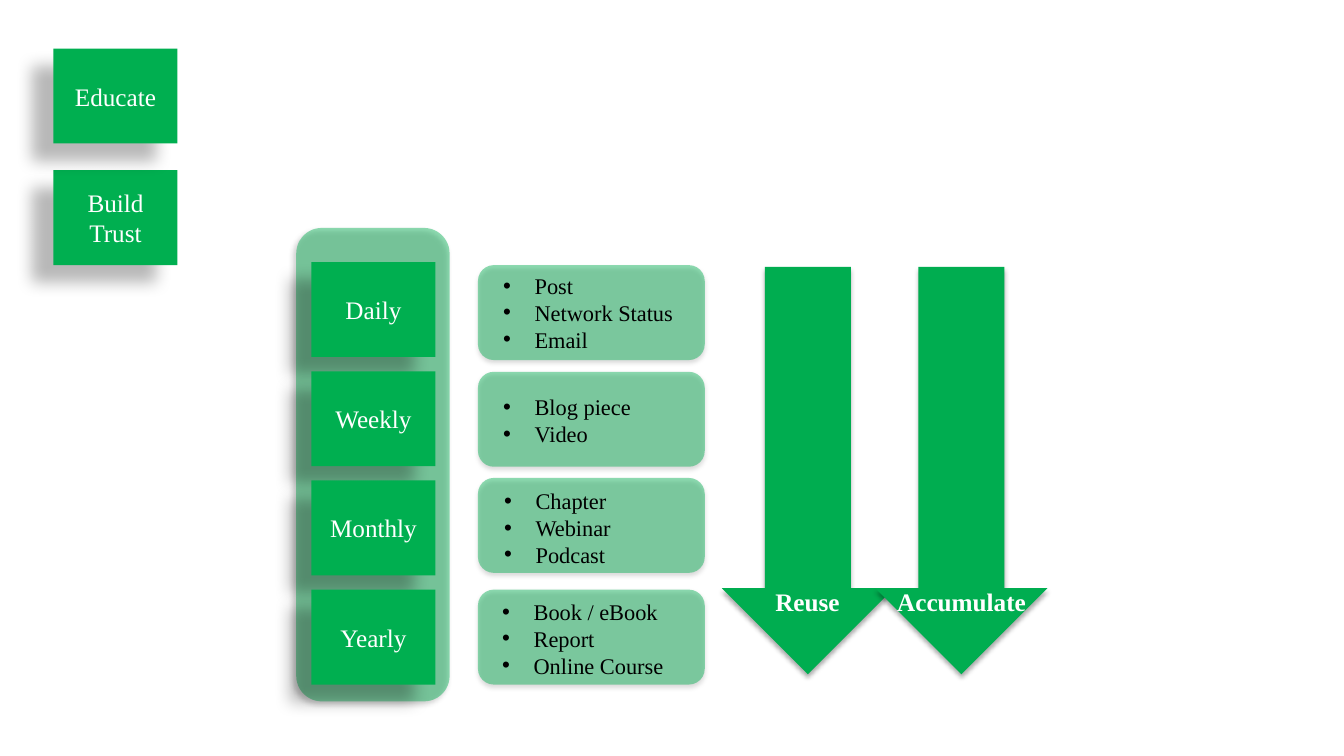
from dataclasses import dataclass

from lxml.etree import SubElement
from pptx import Presentation
from pptx.dml.color import RGBColor
from pptx.enum.shapes import MSO_SHAPE as Preset
from pptx.enum.text import MSO_ANCHOR as Anchor, MSO_AUTO_SIZE as AutoSize, PP_ALIGN as Align
from pptx.oxml.ns import qn
from pptx.shapes.autoshape import Shape
from pptx.slide import Slide
from pptx.util import Pt

FONT = "Times New Roman"
GREEN, ARROW_GREEN = "00AF50", "00AD50"
WHITE, BLACK = "FFFFFF", "000000"
OPAQUE, TINT = 100, 44
BOX_WIDTH, BOX_HEIGHT = 88.6, 67.8
GOAL_LEFT = 38.2
PERIOD_LEFT, PERIOD_TOP, PERIOD_PITCH = 222.5, 187.2, 78
PANEL_LEFT, PANEL_WIDTH = 341.4, 162
ARROW_TOP, ARROW_WIDTH, ARROW_HEIGHT = 190.7, 123, 291
ARROW_LABEL_TOP, ARROW_LABEL_HEIGHT = 415.4, 29
BULLET_INDENT = 22.5


@dataclass(frozen=True)
class Area:
    left: float
    top: float
    width: float
    height: float

    def lengths(self) -> list[Pt]:
        return [Pt(n) for n in (self.left, self.top, self.width, self.height)]


@dataclass(frozen=True)
class Shadow:
    opacity: float
    blur: float
    distance: float
    angle: float


@dataclass(frozen=True)
class Period:
    name: str
    panel_top: float
    outputs: list[str]
    outputs_area: Area


@dataclass(frozen=True)
class Flow:
    name: str
    left: float
    label_left: float
    label_width: float


COLUMN_SHADOW = Shadow(40, 4, 3, 135)
BOX_SHADOW = Shadow(28, 11.8, 19.7, 141)
SOFT_SHADOW = Shadow(32, 3.5, 2.2, 90)

PERIODS = [
    Period("Daily", 189.4, ["Post", "Network Status", "Email"],
           Area(352.3, 190.8, 139.7, 67.7)),
    Period("Weekly", 265.6, ["Blog piece", "Video"],
           Area(352.3, 277.4, 123.8, 46.1)),
    Period("Monthly", 341.4, ["Chapter", "Webinar", "Podcast"],
           Area(353, 344.4, 150.5, 65.5)),
    Period("Yearly", 421.2, ["Book / eBook", "Report", "Online Course"],
           Area(351.6, 423.6, 158.4, 65.5)),
]
GOALS = {"Build Trust": 121.6, "Educate": 34.7}
FLOWS = [Flow("Reuse", 515.6, 530, 93.6), Flow("Accumulate", 625.2, 629.3, 115.2)]


def color(value: str) -> RGBColor:
    return RGBColor.from_string(value)


def add_alpha(color_element, percent: float) -> None:
    SubElement(color_element, qn("a:alpha"), val=str(round(percent * 1000)))


def add_block(slide: Slide, preset: Preset, area: Area, fill: str, shadow: Shadow,
              opacity: float = OPAQUE) -> Shape:
    block = slide.shapes.add_shape(preset, *area.lengths())
    block.fill.solid()
    block.fill.fore_color.rgb = color(fill)
    block.line.fill.background()
    block.shadow.inherit = False
    properties = block.element.spPr
    if opacity < OPAQUE:
        add_alpha(properties.find(qn("a:solidFill"))[0], opacity)
    outer = SubElement(
        properties.find(qn("a:effectLst")), qn("a:outerShdw"),
        blurRad=str(Pt(shadow.blur)), dist=str(Pt(shadow.distance)),
        dir=str(shadow.angle * 60000), algn="ctr", rotWithShape="0")
    add_alpha(SubElement(outer, qn("a:srgbClr"), val=BLACK), shadow.opacity)
    return block


def format_text(holder: Shape, size: float, ink: str, align: Align, bold: bool = False) -> None:
    for paragraph in holder.text_frame.paragraphs:
        paragraph.alignment = align
        for run in paragraph.runs:
            run.font.name = FONT
            run.font.size = Pt(size)
            run.font.bold = bold
            run.font.color.rgb = color(ink)


def add_label(slide: Slide, area: Area, text: str) -> Shape:
    label = slide.shapes.add_textbox(*area.lengths())
    label.text_frame.text = text
    label.text_frame.word_wrap = True
    label.text_frame.auto_size = AutoSize.SHAPE_TO_FIT_TEXT
    return label


def add_box(slide: Slide, left: float, top: float, text: str) -> None:
    box = add_block(slide, Preset.RECTANGLE, Area(left, top, BOX_WIDTH, BOX_HEIGHT),
                    GREEN, BOX_SHADOW)
    box.text_frame.text = text
    box.text_frame.vertical_anchor = Anchor.MIDDLE
    format_text(box, 18, WHITE, Align.CENTER)


def add_outputs(slide: Slide, period: Period) -> None:
    add_block(slide, Preset.ROUNDED_RECTANGLE,
              Area(PANEL_LEFT, period.panel_top, PANEL_WIDTH, BOX_HEIGHT),
              GREEN, SOFT_SHADOW, TINT)
    outputs = add_label(slide, period.outputs_area, "\n".join(period.outputs))
    format_text(outputs, 16, BLACK, Align.LEFT)
    for paragraph in outputs.text_frame.paragraphs:
        properties = paragraph._p.get_or_add_pPr()
        properties.set("marL", str(Pt(BULLET_INDENT)))
        properties.set("indent", str(-Pt(BULLET_INDENT)))
        SubElement(properties, qn("a:buFont"), typeface="Arial")
        SubElement(properties, qn("a:buChar"), char="•")


def add_flow(slide: Slide, flow: Flow) -> None:
    add_block(slide, Preset.DOWN_ARROW,
              Area(flow.left, ARROW_TOP, ARROW_WIDTH, ARROW_HEIGHT), ARROW_GREEN, SOFT_SHADOW)
    label = add_label(
        slide, Area(flow.label_left, ARROW_LABEL_TOP, flow.label_width, ARROW_LABEL_HEIGHT),
        flow.name)
    format_text(label, 18, WHITE, Align.CENTER, bold=True)


def main() -> None:
    deck = Presentation()
    deck.slide_width, deck.slide_height = Pt(960), Pt(540)
    slide = deck.slides.add_slide(deck.slide_layouts[6])

    add_block(slide, Preset.ROUNDED_RECTANGLE, Area(211.6, 162.8, 109.6, 338.2),
              GREEN, COLUMN_SHADOW, TINT)
    for row, period in enumerate(PERIODS):
        add_box(slide, PERIOD_LEFT, PERIOD_TOP + row * PERIOD_PITCH, period.name)
    for period in PERIODS:
        add_outputs(slide, period)
    for goal, top in GOALS.items():
        add_box(slide, GOAL_LEFT, top, goal)
    for flow in FLOWS:
        add_flow(slide, flow)

    deck.save("out.pptx")


if __name__ == "__main__":
    main()
